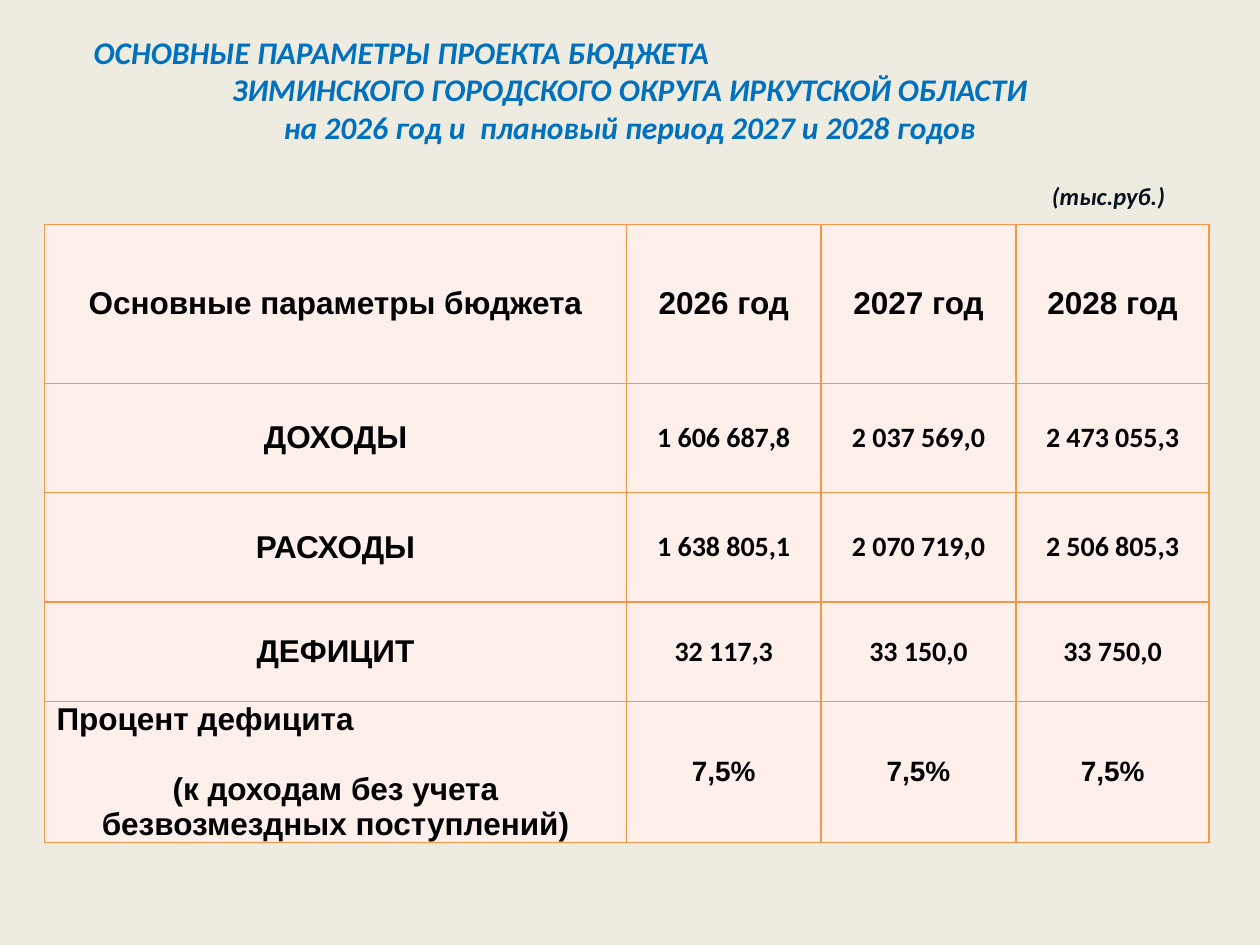
from dataclasses import dataclass

from lxml.etree import SubElement
from pptx import Presentation
from pptx.dml.color import RGBColor
from pptx.enum.text import MSO_ANCHOR as Anchor, MSO_AUTO_SIZE as AutoSize, PP_ALIGN as Align
from pptx.oxml.ns import qn
from pptx.util import Pt

COLORS = {
    "background": "EEECE1",
    "cell": "FDEFE9",
    "border": "F79646",
    "title": "0070C0",
    "unit": "08121F",
    "text": "000000",
}
COL_WIDTHS = (332.8, 111, 111.6, 110.2)
ROW_HEIGHTS = (90.8, 62.5, 62.5, 56.9, 47.5)
HEADERS = ("Основные параметры бюджета", "2026 год", "2027 год", "2028 год")


@dataclass(frozen=True)
class BudgetRow:
    label: str
    values: tuple[str, ...]
    font: str = "Calibri"


ROWS = (
    BudgetRow("ДОХОДЫ", ("1 606 687,8", "2 037 569,0", "2 473 055,3")),
    BudgetRow("РАСХОДЫ", ("1 638 805,1", "2 070 719,0", "2 506 805,3")),
    BudgetRow("ДЕФИЦИТ", ("32 117,3", "33 150,0", "33 750,0")),
    BudgetRow("Процент дефицита", ("7,5%",) * 3, "Arial"),
)


def add_text(tf, text: str, *, font: str = "Arial", size: float = 18, color: str = "text",
             italic: bool = False, align=Align.CENTER, indent: float = 0, after: float = 0) -> None:
    """Write one bold paragraph, reusing the first one while it is empty."""
    p = tf.paragraphs[0] if not tf.text else tf.add_paragraph()
    p.alignment = align
    p.space_after = Pt(after)
    if indent:
        p._p.get_or_add_pPr().set("marL", str(Pt(indent)))
    r = p.add_run()
    r.text = text
    r.font.name, r.font.size = font, Pt(size)
    r.font.bold, r.font.italic = True, italic
    r.font.color.rgb = RGBColor.from_string(COLORS[color])


def add_box(s, left: float, top: float, width: float, height: float):
    """Add a wrapping text box and return its text frame."""
    tf = s.shapes.add_textbox(Pt(left), Pt(top), Pt(width), Pt(height)).text_frame
    tf.word_wrap = True
    tf.auto_size = AutoSize.SHAPE_TO_FIT_TEXT
    return tf


def style_cell(cell) -> None:
    """Set the borders, fill, margins and anchor of a table cell."""
    tcPr = cell._tc.get_or_add_tcPr()
    for side in ("a:lnL", "a:lnR", "a:lnT", "a:lnB"):
        ln = SubElement(tcPr, qn(side), w=str(Pt(1)))
        SubElement(SubElement(ln, qn("a:solidFill")), qn("a:srgbClr"), val=COLORS["border"])
    cell.fill.solid()
    cell.fill.fore_color.rgb = RGBColor.from_string(COLORS["cell"])
    cell.margin_left = cell.margin_right = Pt(5)
    cell.margin_top = cell.margin_bottom = Pt(0)
    cell.vertical_anchor = Anchor.MIDDLE


def add_budget_table(s) -> None:
    """Draw the table of budget parameters."""
    table = s.shapes.add_table(len(ROW_HEIGHTS), len(COL_WIDTHS), Pt(25.3), Pt(128.2),
                               Pt(sum(COL_WIDTHS)), Pt(sum(ROW_HEIGHTS))).table
    table.first_row = table.horz_banding = False
    for column, width in zip(table.columns, COL_WIDTHS):
        column.width = Pt(width)
    for row, height in zip(table.rows, ROW_HEIGHTS):
        row.height = Pt(height)
    for cell in table.iter_cells():
        style_cell(cell)
    for c, header in enumerate(HEADERS):
        add_text(table.cell(0, c).text_frame, header)
    for i, row in enumerate(ROWS, 1):
        tf = table.cell(i, 0).text_frame
        if row is ROWS[-1]:
            add_text(tf, row.label, align=Align.LEFT, indent=2, after=20)
            add_text(tf, "(к доходам без учета безвозмездных поступлений)")
        else:
            add_text(tf, row.label)
        for c, value in enumerate(row.values, 1):
            add_text(table.cell(i, c).text_frame, value, font=row.font, size=16)


def main() -> None:
    """Build and save the slide."""
    prs = Presentation()
    prs.slide_width, prs.slide_height = Pt(720), Pt(540)
    s = prs.slides.add_slide(prs.slide_layouts[6])
    s.background.fill.solid()
    s.background.fill.fore_color.rgb = RGBColor.from_string(COLORS["background"])
    add_budget_table(s)

    title = {"font": "Calibri", "color": "title", "italic": True}
    tf = add_box(s, 0, 15.1, 720, 72.7)
    add_text(tf, "ОСНОВНЫЕ ПАРАМЕТРЫ ПРОЕКТА БЮДЖЕТА", align=Align.LEFT, indent=46.5, **title)
    add_text(tf, "ЗИМИНСКОГО ГОРОДСКОГО ОКРУГА ИРКУТСКОЙ ОБЛАСТИ", **title)
    add_text(tf, "на 2026 год и  плановый период 2027 и 2028 годов", **title)

    tf = add_box(s, 569.5, 100.1, 137.5, 24.5)
    add_text(tf, "(тыс.руб.)", font="Calibri", size=14, color="unit", italic=True,
             align=Align.LEFT, indent=24.5)
    prs.save("out.pptx")


if __name__ == "__main__":
    main()
